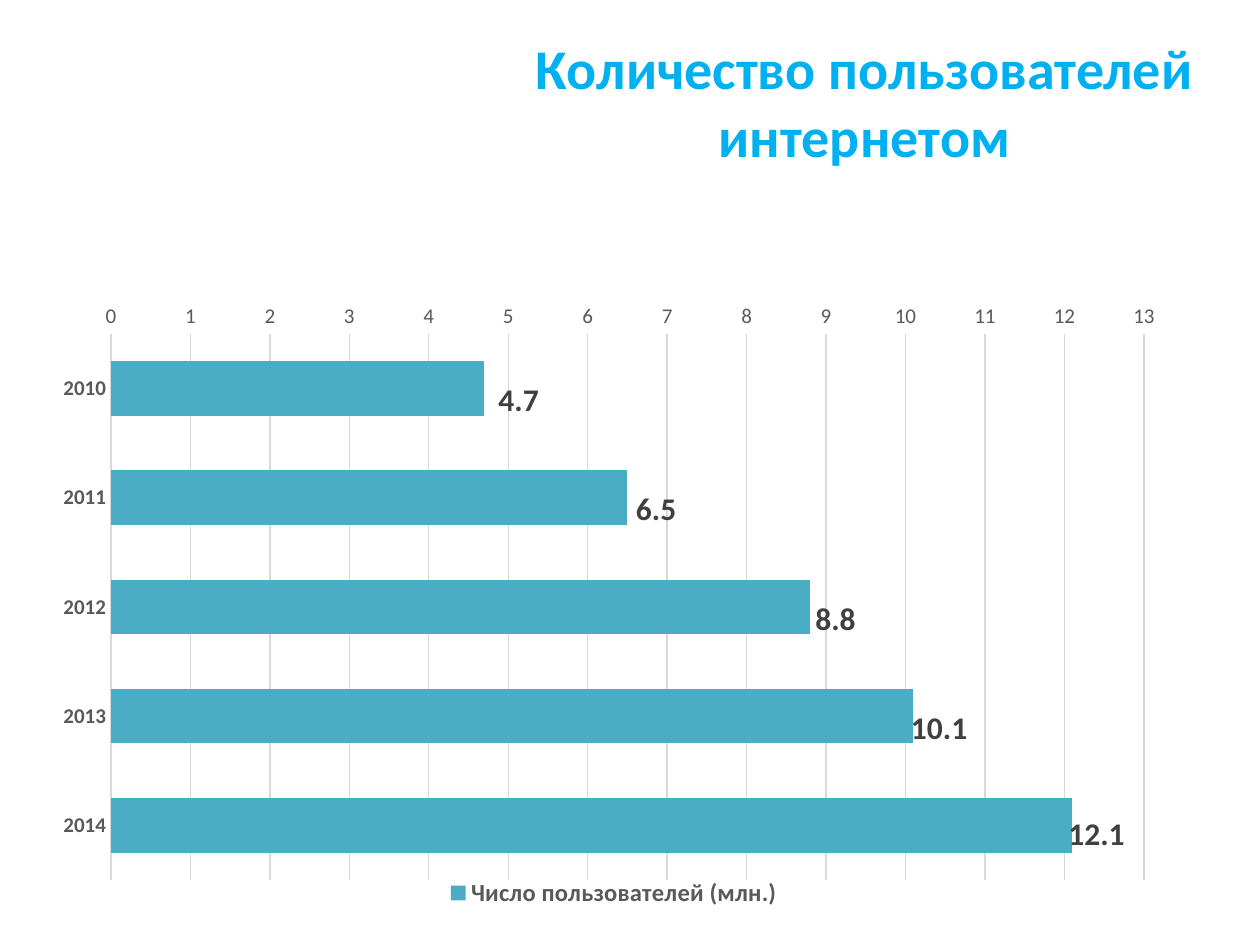
import lxml.etree
import pptx
import pptx.chart.data
import pptx.dml.color
import pptx.enum.chart
import pptx.enum.text
import pptx.oxml.ns
import pptx.util

EMU_PER_PX = 914400 / 126
CHART_WIDTH, CHART_HEIGHT = 1137, 653
C15 = "http://schemas.microsoft.com/office/drawing/2012/chart"
USERS = {"2010": 4.7, "2011": 6.5, "2012": 8.8, "2013": 10.1, "2014": 12.1}
LABEL_SHIFTS = [(221, 12), (287, 12), (375, 12), (427, 12), (505, 9)]


def px(length):
    return pptx.util.Emu(round(length * EMU_PER_PX))


def color(value):
    return pptx.dml.color.RGBColor.from_string(value)


def set_layout(parent, index, x, y, **settings):
    for old in parent.findall(pptx.oxml.ns.qn("c:layout")):
        parent.remove(old)
    layout = lxml.etree.Element(pptx.oxml.ns.qn("c:layout"))
    manual = lxml.etree.SubElement(layout, pptx.oxml.ns.qn("c:manualLayout"))
    settings.update(x=x / CHART_WIDTH, y=y / CHART_HEIGHT)
    for name in ("layoutTarget", "xMode", "yMode", "x", "y", "w", "h"):
        if name in settings:
            lxml.etree.SubElement(manual, pptx.oxml.ns.qn(f"c:{name}"), val=str(settings[name]))
    parent.insert(index, layout)


def hide_leader_lines(labels):
    for flag in labels.findall(pptx.oxml.ns.qn("c:showLeaderLines")):
        flag.set("val", "0")
    extensions = lxml.etree.SubElement(labels, pptx.oxml.ns.qn("c:extLst"))
    extension = lxml.etree.SubElement(
        extensions, pptx.oxml.ns.qn("c:ext"), nsmap={"c15": C15},
        uri="{CE6537A1-D6FC-4f65-9D91-7224C49458BB}")
    lxml.etree.SubElement(extension, f"{{{C15}}}showLeaderLines", val="0")


class SlideBuilder:
    """Hold the slide style and the current page."""

    font_name = "Calibri"
    accent = "00B0F0"
    bar = "4BACC6"
    muted = "595959"
    strong = "404040"
    grid = "D9D9D9"

    def __init__(self, deck):
        self.page = deck.slides.add_slide(deck.slide_layouts[5])

    def style_font(self, font, size, value, bold=False):
        font.name = self.font_name
        font.size = pptx.util.Pt(size)
        font.bold = bold
        font.color.rgb = color(value)

    def title(self, text, left, top, width, height):
        box = self.page.shapes.title
        box.left, box.top, box.width, box.height = map(px, (left, top, width, height))
        frame = box.text_frame
        frame.text = text
        frame.word_wrap = True
        frame.auto_size = pptx.enum.text.MSO_AUTO_SIZE.NONE
        frame.vertical_anchor = pptx.enum.text.MSO_ANCHOR.MIDDLE
        para = frame.paragraphs[0]
        para.alignment = pptx.enum.text.PP_ALIGN.CENTER
        self.style_font(para.font, 32, self.accent, True)

    def bar_chart(self, name, values, shifts, left, top):
        data = pptx.chart.data.CategoryChartData(number_format="#,##0.0")
        data.categories = list(values)
        data.add_series(name, list(values.values()))
        chart = self.page.shapes.add_chart(
            pptx.enum.chart.XL_CHART_TYPE.BAR_STACKED,
            *map(px, (left, top, CHART_WIDTH, CHART_HEIGHT)), data).chart
        chart.has_title = False
        self.style_font(chart.font, 10, "000000")
        plot = chart.plots[0]
        plot.gap_width, plot.overlap = 100, 100
        plot.vary_by_categories = False
        self.axes(chart)
        self.legend(chart)
        self.labels(plot.series[0], shifts)
        area = chart._chartSpace.find(".//" + pptx.oxml.ns.qn("c:plotArea"))
        set_layout(area, 0, 71, 43, layoutTarget="inner", xMode="edge", yMode="edge",
                   w=1033 / CHART_WIDTH, h=546 / CHART_HEIGHT)

    def axes(self, chart):
        for axis, bold in ((chart.category_axis, True), (chart.value_axis, False)):
            axis.major_tick_mark = pptx.enum.chart.XL_TICK_MARK.NONE
            axis.minor_tick_mark = pptx.enum.chart.XL_TICK_MARK.NONE
            axis.format.line.fill.background()
            self.style_font(axis.tick_labels.font, 12, self.muted, bold)
        chart.category_axis.reverse_order = True
        scale = chart.value_axis
        scale.minimum_scale, scale.maximum_scale, scale.major_unit = 0, 13, 1
        scale.tick_labels.number_format = "#,##0"
        scale.tick_labels.number_format_is_linked = False
        scale.has_major_gridlines = True
        line = scale.major_gridlines.format.line
        line.color.rgb = color(self.grid)
        line.width = pptx.util.Pt(0.75)

    def legend(self, chart):
        chart.has_legend = True
        legend = chart.legend
        legend.position = pptx.enum.chart.XL_LEGEND_POSITION.BOTTOM
        legend.include_in_layout = False
        self.style_font(legend.font, 14, self.muted, True)
        set_layout(legend._element, 1, 403, 582, xMode="edge", yMode="edge")

    def labels(self, series, shifts):
        series.format.fill.solid()
        series.format.fill.fore_color.rgb = color(self.bar)
        labels = series.data_labels
        labels.show_value = True
        labels.number_format = "#,##0.0"
        labels.number_format_is_linked = False
        self.style_font(labels.font, 18, self.strong, True)
        for index in range(len(shifts)):
            label = series.points[index].data_label
            self.style_font(label.font, 18, self.strong, True)
        for element, shift in zip(series._element.iter(pptx.oxml.ns.qn("c:dLbl")), shifts):
            set_layout(element, 1, *shift)
        hide_leader_lines(labels._element)


def main():
    deck = pptx.Presentation()
    deck.slide_width, deck.slide_height = px(1260), px(945)
    builder = SlideBuilder(deck)
    builder.title("Количество пользователей интернетом", 505, 48, 719, 106)
    builder.bar_chart("Число пользователей (млн.)", USERS, LABEL_SHIFTS, 40, 291)
    deck.save("out.pptx")


if __name__ == "__main__":
    main()
